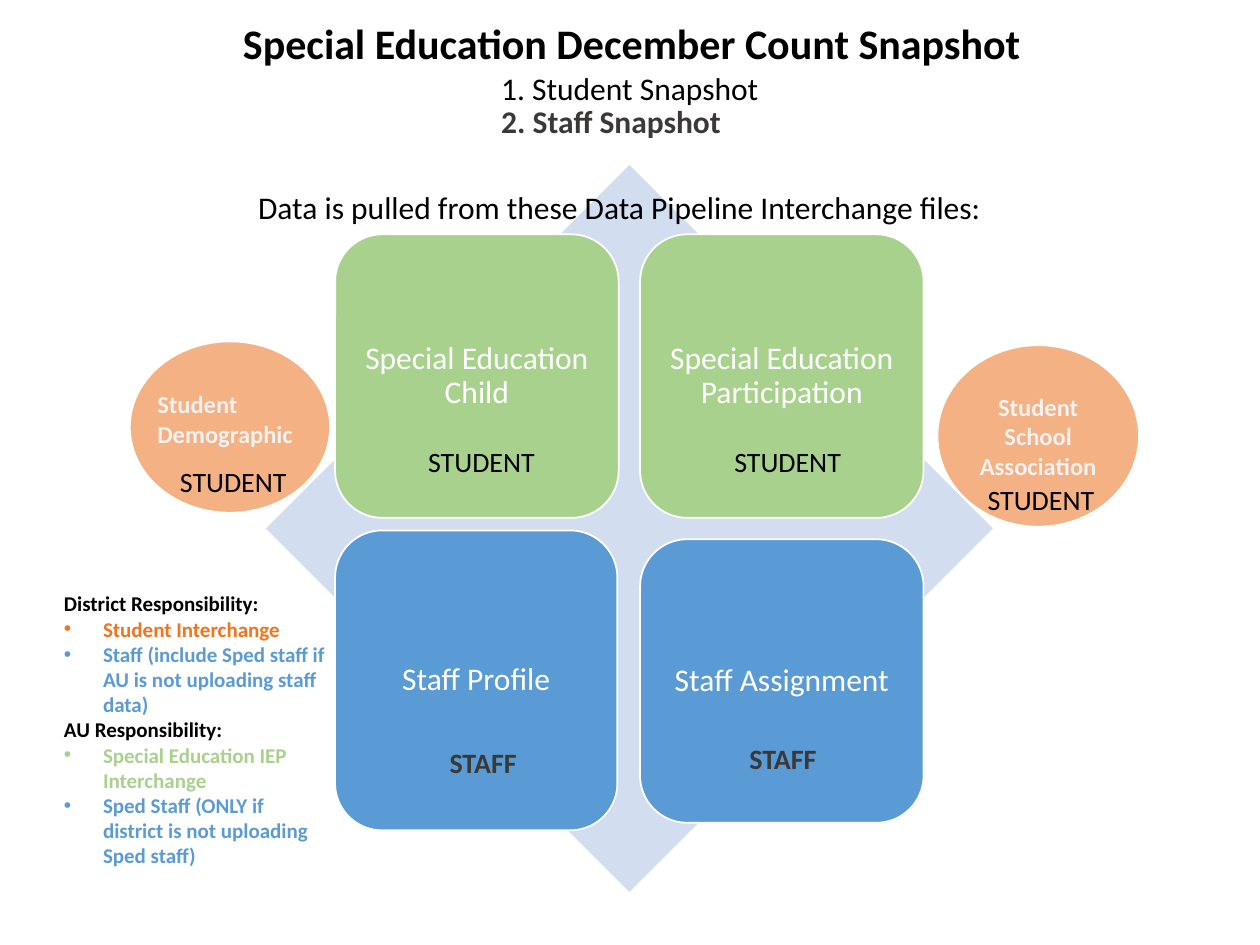
from dataclasses import dataclass
from pptx import Presentation
from pptx.dml.color import RGBColor as Rgb
from pptx.enum.shapes import MSO_SHAPE as Kind
from pptx.enum.text import MSO_ANCHOR as Anchor, MSO_AUTO_SIZE as Fit, PP_ALIGN as Align
from pptx.oxml.ns import qn
from pptx.util import Inches, Pt
from lxml.etree import SubElement as Sub


@dataclass(frozen=True)
class Theme:
    font: str = "Calibri"
    black: str = "000000"
    white: str = "FFFFFF"
    dark: str = "3B3838"
    pale: str = "F2F2F2"
    mist: str = "D2DEEF"
    green: str = "A9D18E"
    blue: str = "5B9BD5"
    peach: str = "F4B183"
    rust: str = "EF7521"
    head: int = 24
    body: int = 18
    tag: int = 16
    oval: int = 14
    note: int = 12


def write(para, text, size, color, bold=False, align=Align.LEFT, space=None, bullet=False):
    if bullet:
        props = para._p.get_or_add_pPr()
        props.set("marL", str(Inches(0.31)))
        props.set("indent", str(-Inches(0.31)))
        Sub(props, qn("a:buFont")).set("typeface", "Arial")
        Sub(props, qn("a:buChar")).set("char", "•")
    para.alignment = align
    if space:
        para.line_spacing = space
    run = para.add_run()
    run.text = text
    font = run.font
    font.name = Theme.font
    font.size = Pt(size)
    font.bold = bold
    font.color.rgb = Rgb.from_string(color)


class Deck:
    def __init__(self, theme):
        self.theme = theme
        self.show = Presentation()
        self.show.slide_width, self.show.slide_height = Inches(10), Inches(7.5)
        self.slide = self.show.slides.add_slide(self.show.slide_layouts[5])

    def title(self, text, box):
        head = self.slide.shapes.title
        head.left, head.top, head.width, head.height = map(Inches, box)
        frame = head.text_frame
        frame.auto_size = Fit.NONE
        frame.vertical_anchor = Anchor.TOP
        write(frame.paragraphs[0], text, self.theme.head, self.theme.black, True, Align.CENTER)

    def shape(self, kind, box, fill, edge=True):
        item = self.slide.shapes.add_shape(kind, *map(Inches, box))
        item.shadow.inherit = False
        item.fill.solid()
        item.fill.fore_color.rgb = Rgb.from_string(fill)
        if edge:
            item.line.color.rgb = Rgb.from_string(self.theme.white)
            item.line.width = Pt(1)
        else:
            item.line.fill.background()
        return item

    def card(self, text, box, fill):
        frame = self.shape(Kind.ROUNDED_RECTANGLE, box, fill).text_frame
        frame.word_wrap = True
        frame.vertical_anchor = Anchor.MIDDLE
        frame.margin_left = frame.margin_right = Inches(0.07)
        frame.margin_top = frame.margin_bottom = Inches(0.07)
        write(frame.paragraphs[0], text, self.theme.body, self.theme.white,
              align=Align.CENTER, space=0.9)

    def oval(self, box, text=None):
        frame = self.shape(Kind.OVAL, box, self.theme.peach).text_frame
        frame.word_wrap = True
        frame.vertical_anchor = Anchor.MIDDLE
        if text:
            write(frame.paragraphs[0], text, self.theme.oval, self.theme.pale, True, Align.CENTER)

    def text(self, box, *lines):
        frame = self.slide.shapes.add_textbox(*map(Inches, box)).text_frame
        frame.word_wrap = True
        for i, (text, form) in enumerate(lines):
            para = frame.add_paragraph() if i else frame.paragraphs[0]
            write(para, text, **form)


def main():
    look = Theme()
    deck = Deck(look)
    deck.title("Special Education December Count Snapshot", (0, 0.09, 10.03, 0.5))
    deck.shape(Kind.DIAMOND, (2.11, 1.31, 5.77, 5.77), look.mist, edge=False)
    for text, box, fill in (
        ("Special Education Child", (2.66, 1.86, 2.25, 2.25), look.green),
        ("Special Education Participation", (5.08, 1.86, 2.25, 2.25), look.green),
        ("Staff Profile", (2.66, 4.21, 2.24, 2.38), look.blue),
        ("Staff Assignment", (5.08, 4.28, 2.25, 2.25), look.blue),
    ):
        deck.card(text, box, fill)

    plain = dict(size=look.body, color=look.black)
    deck.text((1.95, 1.44, 7.72, 0.4),
              ("Data is pulled from these Data Pipeline Interchange files:", plain))
    deck.text((3.88, 0.5, 2.4, 0.4), ("1. Student Snapshot", plain))
    deck.text((3.88, 0.76, 2, 0.4),
              ("2. Staff Snapshot", dict(size=look.body, color=look.dark, bold=True)))

    deck.oval((7.44, 2.74, 1.6, 1.44), "Student School Association")
    deck.oval((1.03, 2.71, 1.59, 1.36))
    deck.text((1.15, 3.04, 1.64, 0.57),
              ("Student Demographic", dict(size=look.oval, color=look.pale, bold=True)))

    note = dict(size=look.note, bold=True)
    head = dict(note, color=look.black)
    item = dict(note, bullet=True)
    deck.text(
        (0.41, 4.64, 2.27, 2.32),
        ("District Responsibility:", head),
        ("Student Interchange", dict(item, color=look.rust)),
        ("Staff (include Sped staff if AU is not uploading staff data)",
         dict(item, color=look.blue)),
        ("AU Responsibility:", head),
        ("Special Education IEP Interchange", dict(item, color=look.green)),
        ("Sped Staff (ONLY if district is not uploading Sped staff)",
         dict(item, color=look.blue)),
    )

    pupil = dict(size=look.tag, color=look.black)
    staff = dict(size=look.tag, color=look.dark, bold=True)
    for text, form, spots in (
        ("STUDENT", pupil, ((1.33, 3.64), (7.74, 3.78), (3.3, 3.48), (5.73, 3.48))),
        ("STAFF", staff, ((5.85, 5.84), (3.47, 5.87))),
    ):
        for left, top in spots:
            deck.text((left, top, 1.1, 0.37), (text, form))
    deck.show.save("out.pptx")


if __name__ == "__main__":
    main()
